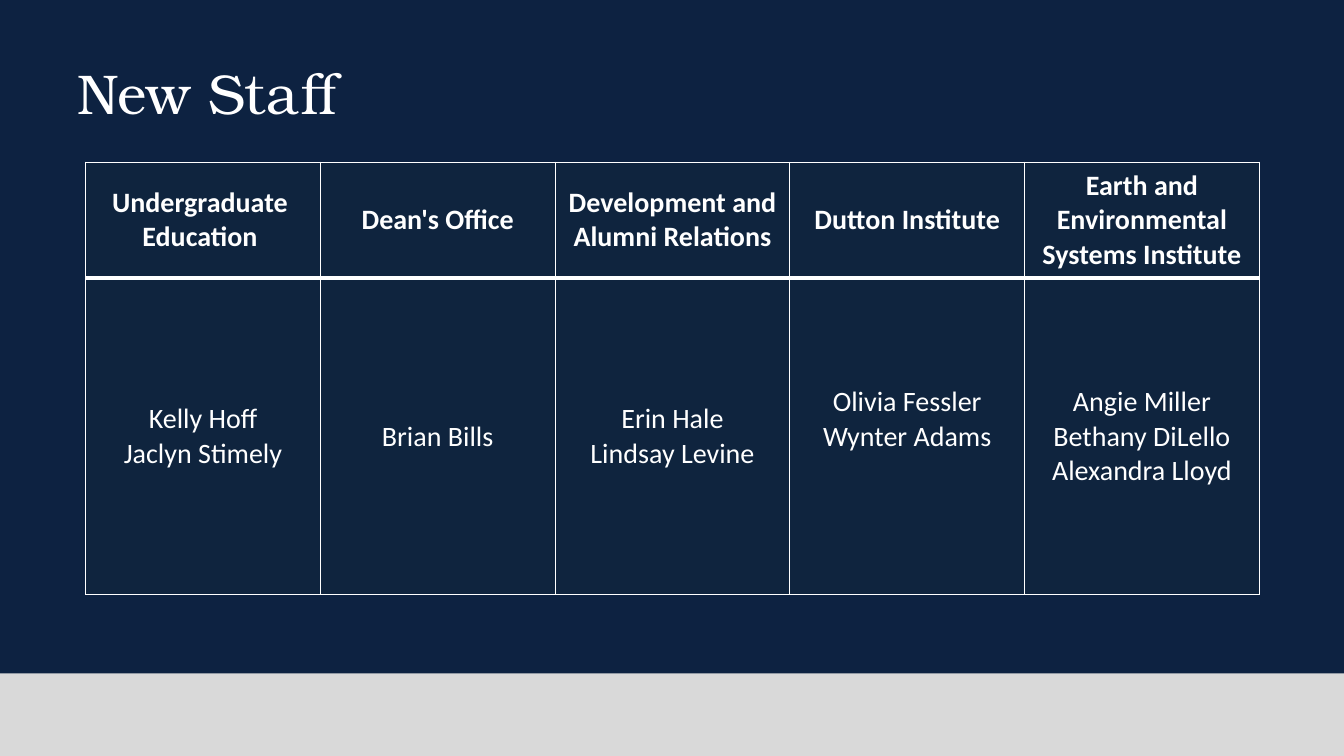
"""Build the New Staff slide: a title and a table of names by unit."""
from dataclasses import dataclass

from lxml import etree
from pptx import Presentation
from pptx.dml.color import RGBColor
from pptx.enum.shapes import MSO_SHAPE as Shape
from pptx.enum.text import MSO_ANCHOR as Anchor, PP_ALIGN as Align
from pptx.oxml.ns import qn
from pptx.util import Inches, Pt

TITLE = "New Staff"
UNITS = [
    (["Undergraduate", "Education"], ["Kelly Hoff", "Jaclyn Stimely"]),
    (["Dean's Office"], ["Brian Bills"]),
    (["Development and Alumni Relations"], ["Erin Hale", "Lindsay Levine"]),
    (["Dutton Institute"], ["Olivia Fessler", "Wynter Adams"]),
    (["Earth and Environmental Systems Institute"],
     ["Angie Miller", "Bethany DiLello", "Alexandra Lloyd"]),
]
BANDS = [(0, 6.7, "navy"), (6.68, 0.82, "gray")]
SLIDE_WIDTH, SLIDE_HEIGHT = 13.33, 7.5
TABLE_LEFT, TABLE_TOP, TABLE_WIDTH = 0.85, 1.61, 11.64
ROW_HEIGHTS = [1.15, 3.14]
SIDE_MARGIN, END_MARGIN = 0.11, 0.06
EXTRA_RIGHT = {(0, 0): 0.06}
EXTRA_BOTTOM = {(1, 3): 0.34}


@dataclass(frozen=True)
class Theme:
    navy: str = "0D2241"
    gray: str = "D9D9D9"
    cell: str = "0F243E"
    white: str = "FFFFFF"
    title_font: str = "TeX Gyre Bonum"
    body_font: str = "Calibri"
    title_size: int = 40
    body_size: int = 20
    thin: int = 1
    thick: int = 3


THEME = Theme()


def write(frame, lines, *, font, size, bold=False, align=Align.LEFT):
    frame.word_wrap = True
    for index, line in enumerate(lines):
        paragraph = frame.paragraphs[0] if index == 0 else frame.add_paragraph()
        paragraph.alignment = align
        run = paragraph.add_run()
        run.text = line
        run.font.name = font
        run.font.size = Pt(size)
        run.font.bold = bold
        run.font.color.rgb = RGBColor.from_string(THEME.white)


def add_band(slide, top, height, color):
    shape = slide.shapes.add_shape(
        Shape.RECTANGLE, 0, Inches(top), Inches(SLIDE_WIDTH), Inches(height))
    shape.shadow.inherit = False
    shape.fill.solid()
    shape.fill.fore_color.rgb = RGBColor.from_string(color)
    shape.line.fill.background()


def set_borders(cell, widths):
    properties = cell._tc.get_or_add_tcPr()
    for index, (side, width) in enumerate(widths.items()):
        line = etree.Element(qn(f"a:ln{side}"), w=str(Pt(width)))
        fill = etree.SubElement(line, qn("a:solidFill"))
        etree.SubElement(fill, qn("a:srgbClr"), val=THEME.white)
        properties.insert(index, line)


def format_cell(cell, row, column):
    cell.fill.solid()
    cell.fill.fore_color.rgb = RGBColor.from_string(THEME.cell)
    cell.vertical_anchor = Anchor.MIDDLE
    cell.margin_left = Inches(SIDE_MARGIN)
    cell.margin_right = Inches(SIDE_MARGIN + EXTRA_RIGHT.get((row, column), 0))
    cell.margin_top = Inches(END_MARGIN)
    cell.margin_bottom = Inches(END_MARGIN + EXTRA_BOTTOM.get((row, column), 0))
    widths = dict.fromkeys("LRTB", THEME.thin)
    widths["B" if row == 0 else "T"] = THEME.thick
    set_borders(cell, widths)


def add_staff_table(slide):
    table = slide.shapes.add_table(
        len(ROW_HEIGHTS), len(UNITS), Inches(TABLE_LEFT), Inches(TABLE_TOP),
        Inches(TABLE_WIDTH), Inches(sum(ROW_HEIGHTS))).table
    for row, height in enumerate(ROW_HEIGHTS):
        table.rows[row].height = Inches(height)
    for column, unit in enumerate(UNITS):
        table.columns[column].width = Inches(TABLE_WIDTH / len(UNITS))
        for row, lines in enumerate(unit):
            cell = table.cell(row, column)
            format_cell(cell, row, column)
            write(cell.text_frame, lines, font=THEME.body_font,
                  size=THEME.body_size, bold=row == 0, align=Align.CENTER)


def main():
    presentation = Presentation()
    presentation.slide_width = Inches(SLIDE_WIDTH)
    presentation.slide_height = Inches(SLIDE_HEIGHT)
    slide = presentation.slides.add_slide(presentation.slide_layouts[6])
    for top, height, color in BANDS:
        add_band(slide, top, height, getattr(THEME, color))
    title = slide.shapes.add_textbox(
        Inches(0.67), Inches(0.36), Inches(12), Inches(1.11)).text_frame
    title.vertical_anchor = Anchor.MIDDLE
    write(title, [TITLE], font=THEME.title_font, size=THEME.title_size)
    add_staff_table(slide)
    presentation.save("out.pptx")


if __name__ == "__main__":
    main()
